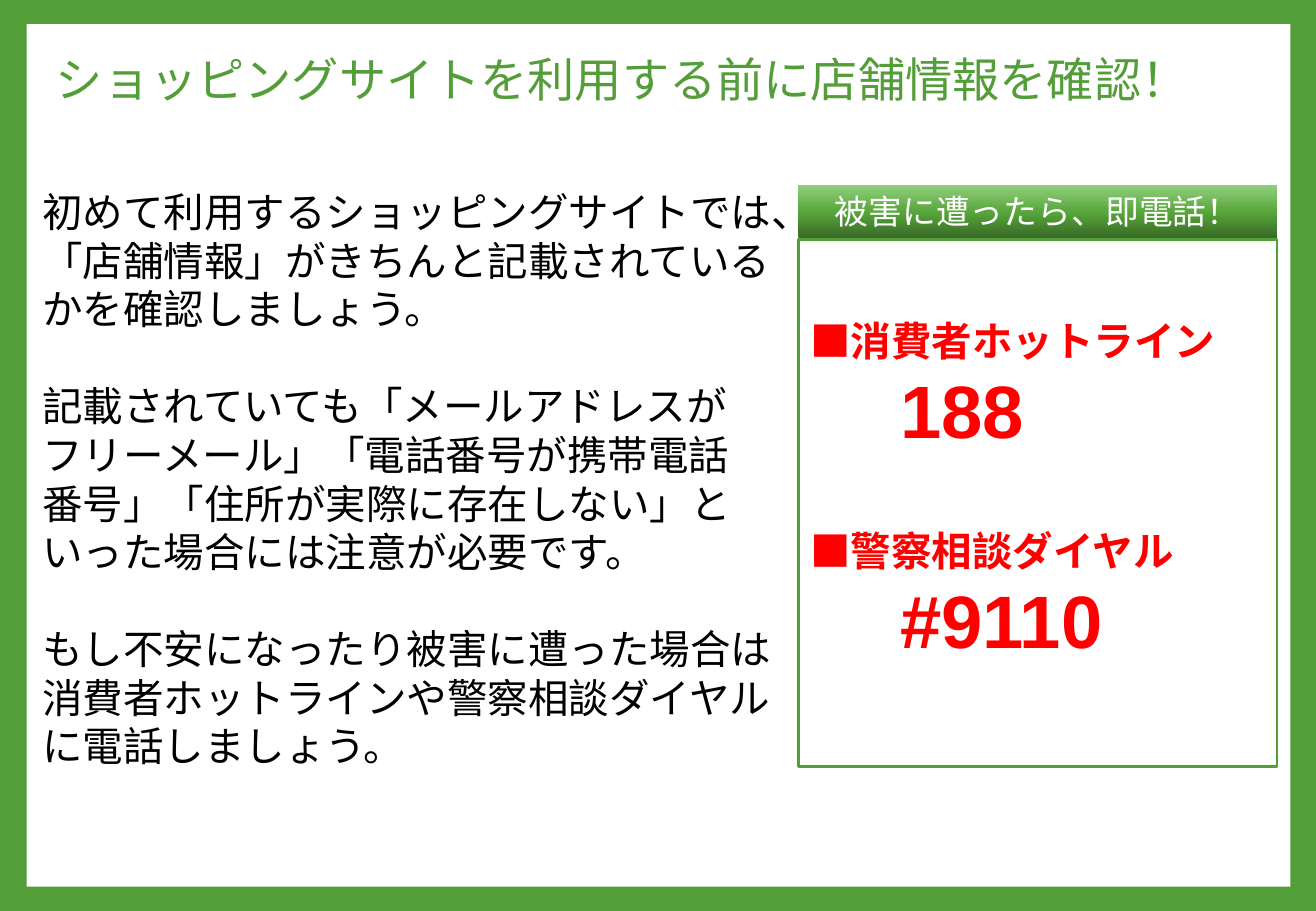
from copy import deepcopy
from dataclasses import dataclass

from pptx import Presentation
from pptx.dml.color import RGBColor
from pptx.enum.shapes import MSO_SHAPE
from pptx.enum.text import MSO_ANCHOR, MSO_AUTO_SIZE, PP_ALIGN
from pptx.oxml.ns import qn
from pptx.shapes.autoshape import Shape
from pptx.slide import Slide
from pptx.text.text import TextFrame
from pptx.util import Inches, Pt

RECTANGLE = MSO_SHAPE.RECTANGLE
TOP, MIDDLE = MSO_ANCHOR.TOP, MSO_ANCHOR.MIDDLE
LEFT, CENTER = PP_ALIGN.LEFT, PP_ALIGN.CENTER
NO_AUTOFIT = MSO_AUTO_SIZE.NONE
TITLE_ONLY_LAYOUT = 5


@dataclass(frozen=True)
class Theme:
    green: str = "549E39"
    white: str = "FFFFFF"
    black: str = "000000"
    alert: str = "FF0000"
    band_stops: tuple[tuple[float, str], ...] = (
        (0, "386A26"), (0.48, "57A53B"), (1, "93D07D"))
    heading_font: str = "Calibri"
    body_font: str = "Arial"
    title_size: int = 28
    body_size: int = 24
    band_size: int = 20
    number_size: int = 44


THEME = Theme()


@dataclass(frozen=True)
class Box:
    left: float
    top: float
    width: float
    height: float

    def lengths(self) -> tuple[int, int, int, int]:
        return (Inches(self.left), Inches(self.top),
                Inches(self.width), Inches(self.height))


@dataclass(frozen=True)
class Line:
    text: str
    size: int = THEME.body_size
    color: str = THEME.black
    font: str = THEME.body_font
    bold: bool = False
    space_before: float = 0
    indent: float = 0
    align: PP_ALIGN = LEFT


@dataclass(frozen=True)
class Contact:
    name: str
    number: str
    space_before: float = 0

    def lines(self) -> list[Line]:
        return [
            Line(f"■{self.name}", color=THEME.alert, bold=True,
                 space_before=self.space_before),
            Line(self.number, size=THEME.number_size, color=THEME.alert,
                 bold=True, indent=0.74),
        ]


PANEL = Box(0.22, 0.2, 10.4, 7.1)
TITLE = Box(0.36, 0.32, 10.47, 0.72)
ADVICE = Box(0.25, 1.49, 6.21, 4.95)
HOTLINES = Box(6.57, 1.97, 3.94, 4.34)
BAND = Box(6.57, 1.52, 3.94, 0.44)

TITLE_LINE = Line("ショッピングサイトを利用する前に店舗情報を確認！",
                  THEME.title_size, THEME.green, THEME.heading_font)
BAND_LINE = Line("被害に遭ったら、即電話！", THEME.band_size, THEME.white,
                 THEME.heading_font, align=CENTER)
ADVICE_GAP = 28.8
ADVICE_LINES = [
    Line("初めて利用するショッピングサイトでは、「店舗情報」がきちんと"
         "記載されているかを確認しましょう。"),
    Line("記載されていても「メールアドレスが", space_before=ADVICE_GAP),
    Line("フリーメール」「電話番号が携帯電話"),
    Line("番号」「住所が実際に存在しない」といった場合には注意が必要です。"),
    Line("もし不安になったり被害に遭った場合は消費者ホットラインや"
         "警察相談ダイヤルに電話しましょう。", space_before=ADVICE_GAP),
]
CONTACTS = [
    Contact("消費者ホットライン", "188"),
    Contact("警察相談ダイヤル", "#9110", space_before=43),
]


def write_lines(frame: TextFrame, lines: list[Line], anchor: MSO_ANCHOR) -> None:
    frame.word_wrap = True
    frame.auto_size = NO_AUTOFIT
    frame.vertical_anchor = anchor
    for index, line in enumerate(lines):
        paragraph = frame.add_paragraph() if index else frame.paragraphs[0]
        paragraph.alignment = line.align
        paragraph.space_before = Pt(line.space_before)
        if line.indent:
            paragraph._p.get_or_add_pPr().set("marL", str(Inches(line.indent)))
        run = paragraph.add_run()
        run.text = line.text
        run.font.name = line.font
        run.font.size = Pt(line.size)
        run.font.bold = line.bold
        run.font.color.rgb = RGBColor.from_string(line.color)


def add_rectangle(slide: Slide, box: Box) -> Shape:
    """Add a white rectangle with neither outline nor shadow."""
    rectangle = slide.shapes.add_shape(RECTANGLE, *box.lengths())
    rectangle.shadow.inherit = False
    rectangle.fill.solid()
    rectangle.fill.fore_color.rgb = RGBColor.from_string(THEME.white)
    rectangle.line.fill.background()
    return rectangle


def fill_with_gradient(band: Shape) -> None:
    """Run the theme's three band colours from bottom to top."""
    band.fill.gradient()
    band.fill.gradient_angle = 90
    stop_list = band._element.spPr.find(f".//{qn('a:gsLst')}")
    stop_list.append(deepcopy(stop_list[0]))
    for stop, (position, color) in zip(band.fill.gradient_stops, THEME.band_stops):
        stop.position = position
        stop.color.rgb = RGBColor.from_string(color)


def add_background(slide: Slide) -> None:
    slide.background.fill.solid()
    slide.background.fill.fore_color.rgb = RGBColor.from_string(THEME.green)
    panel = add_rectangle(slide, PANEL)
    slide.shapes._spTree.insert(2, panel._element)  # behind the title


def add_title(slide: Slide) -> None:
    title = slide.shapes.title
    title.left, title.top, title.width, title.height = TITLE.lengths()
    write_lines(title.text_frame, [TITLE_LINE], MIDDLE)
    title.text_frame.paragraphs[0].line_spacing = 0.9


def add_advice(slide: Slide) -> None:
    advice = slide.shapes.add_textbox(*ADVICE.lengths())
    write_lines(advice.text_frame, ADVICE_LINES, TOP)


def add_hotlines(slide: Slide) -> None:
    hotlines = add_rectangle(slide, HOTLINES)
    hotlines.line.color.rgb = RGBColor.from_string(THEME.green)
    hotlines.line.width = Pt(1.5)
    hotlines.text_frame.margin_top = Inches(0.63)
    contact_lines = [line for contact in CONTACTS for line in contact.lines()]
    write_lines(hotlines.text_frame, contact_lines, TOP)

    band = add_rectangle(slide, BAND)
    fill_with_gradient(band)
    write_lines(band.text_frame, [BAND_LINE], MIDDLE)


def main() -> None:
    presentation = Presentation()
    presentation.slide_width = Inches(10.83)
    presentation.slide_height = Inches(7.5)
    slide = presentation.slides.add_slide(
        presentation.slide_layouts[TITLE_ONLY_LAYOUT])
    add_background(slide)
    add_title(slide)
    add_advice(slide)
    add_hotlines(slide)
    presentation.save("out.pptx")


if __name__ == "__main__":
    main()
